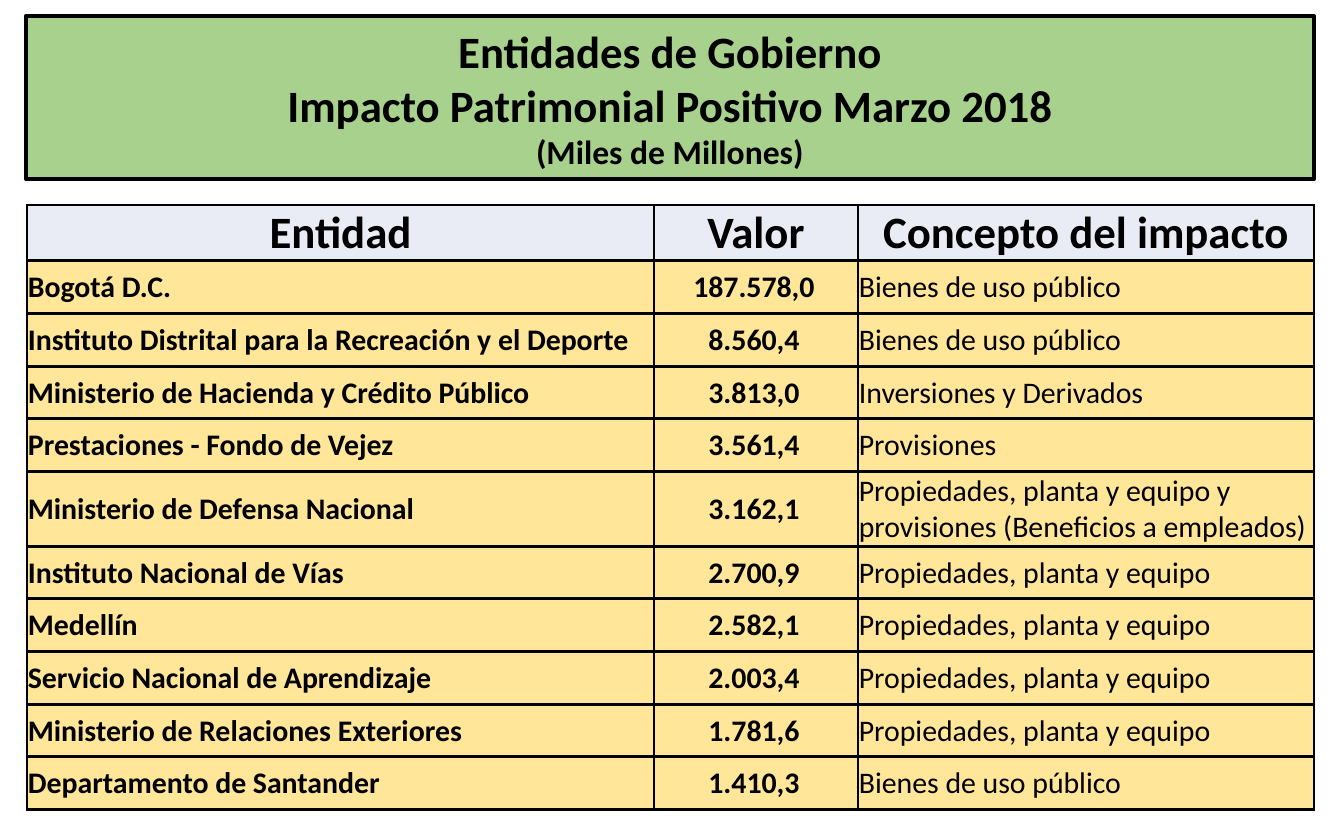
"""Build a slide with a title banner and a table of positive equity impacts."""
import pptx
import pptx.dml.color
import pptx.enum.shapes
import pptx.enum.text
import pptx.oxml
import pptx.oxml.ns
import pptx.util

SCALE = 914400 / 134.4
THEME = {
    "font": "Calibri", "ink": "000000", "banner": "A9D18E", "head": "E9EBF5", "body": "FFE699",
    "big": 24, "mid": 18, "small": 16, "frame": 2.25, "grid": 1.5,
}
ALIGN = pptx.enum.text.PP_ALIGN
MIDDLE = pptx.enum.text.MSO_ANCHOR.MIDDLE
RGB = pptx.dml.color.RGBColor.from_string


def px(count):
    """Turn pixels into EMU."""
    return pptx.util.Emu(round(count * SCALE))


def write(para, text, size, bold, align):
    """Put one styled line of text in a paragraph."""
    para.text = text
    para.alignment = align
    style = {"name": THEME["font"], "size": pptx.util.Pt(size), "bold": bold}
    for key, value in style.items():
        setattr(para.font, key, value)
    para.font.color.rgb = RGB(THEME["ink"])


deck = pptx.Presentation()
deck.slide_width, deck.slide_height = px(1344), px(840)
slide = deck.slides.add_slide(deck.slide_layouts[6])

banner = slide.shapes.add_shape(
    pptx.enum.shapes.MSO_SHAPE.RECTANGLE, px(26), px(16), px(1288), px(163))
banner.shadow.inherit = False
banner.fill.solid()
banner.fill.fore_color.rgb = RGB(THEME["banner"])
banner.line.color.rgb = RGB(THEME["ink"])
banner.line.width = pptx.util.Pt(THEME["frame"])
frame = banner.text_frame
frame.word_wrap = True
frame.vertical_anchor = MIDDLE
titles = [
    ("Entidades de Gobierno", THEME["big"]),
    ("Impacto Patrimonial Positivo Marzo 2018", THEME["big"]),
    ("(Miles de Millones)", THEME["mid"]),
]
for i, (text, size) in enumerate(titles):
    para = frame.add_paragraph() if i else frame.paragraphs[0]
    write(para, text, size, True, ALIGN.CENTER)

PUBLIC = "Bienes de uso público"
PLANT = "Propiedades, planta y equipo"
rows = [
    ("Entidad", "Valor", "Concepto del impacto"),
    ("Bogotá D.C.", "187.578,0", PUBLIC),
    ("Instituto Distrital para la Recreación y el Deporte", "8.560,4", PUBLIC),
    ("Ministerio de Hacienda y Crédito Público", "3.813,0", "Inversiones y Derivados"),
    ("Prestaciones - Fondo de Vejez", "3.561,4", "Provisiones"),
    ("Ministerio de Defensa Nacional", "3.162,1",
     PLANT + " y provisiones (Beneficios a empleados)"),
    ("Instituto Nacional de Vías", "2.700,9", PLANT),
    ("Medellín", "2.582,1", PLANT),
    ("Servicio Nacional de Aprendizaje", "2.003,4", PLANT),
    ("Ministerio de Relaciones Exteriores", "1.781,6", PLANT),
    ("Departamento de Santander", "1.410,3", PUBLIC),
]
widths = [627, 204, 456]
heights = [52 + (i % 3 > 0) for i in range(len(rows))]
heights[0], heights[5] = 55, 75

table = slide.shapes.add_table(
    len(rows), len(widths), px(27), px(205), px(sum(widths)), px(sum(heights))).table
for col, width in zip(table.columns, widths):
    col.width = px(width)
for row, height in zip(table.rows, heights):
    row.height = px(height)

edge = (
    '<a:{} {} w="{}"><a:solidFill><a:srgbClr val="{}"/></a:solidFill></a:{}>'
)
weight = pptx.util.Pt(THEME["grid"])
for i, row in enumerate(rows):
    for j, text in enumerate(row):
        cell = table.cell(i, j)
        form = {
            "vertical_anchor": MIDDLE, "margin_left": px(1), "margin_top": px(1),
            "margin_right": px(5 if i and j == 1 else 1), "margin_bottom": px(0),
        }
        for key, value in form.items():
            setattr(cell, key, value)
        props = cell._tc.get_or_add_tcPr()
        for side in ("lnL", "lnR", "lnT", "lnB"):
            props.append(pptx.oxml.parse_xml(edge.format(
                side, pptx.oxml.ns.nsdecls("a"), weight, THEME["ink"], side)))
        cell.fill.solid()
        cell.fill.fore_color.rgb = RGB(THEME["body" if i else "head"])
        size = THEME["small" if i else "big"]
        align = ALIGN.CENTER if i == 0 or j == 1 else ALIGN.LEFT
        write(cell.text_frame.paragraphs[0], text, size, i == 0 or j < 2, align)

deck.save("out.pptx")
